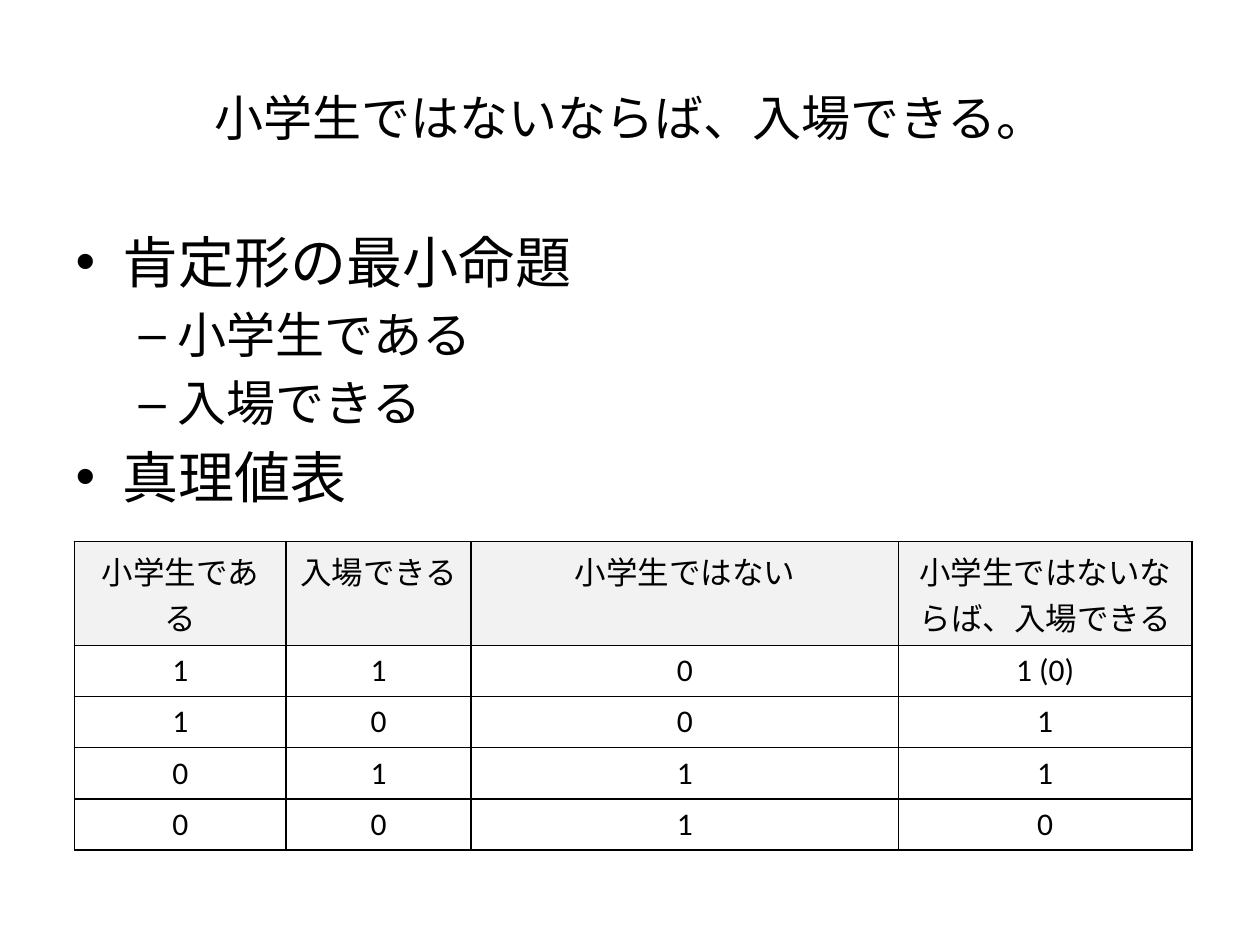
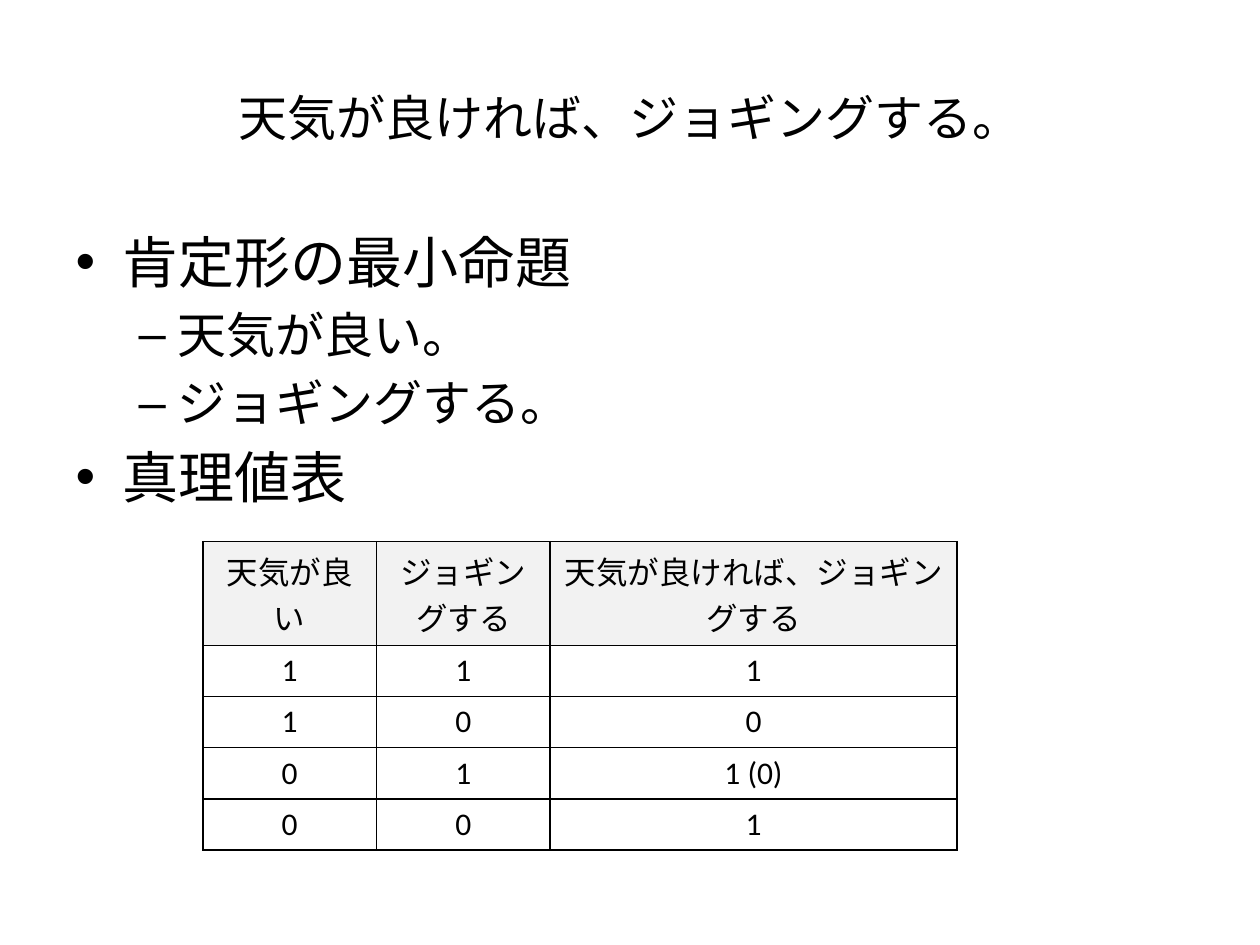
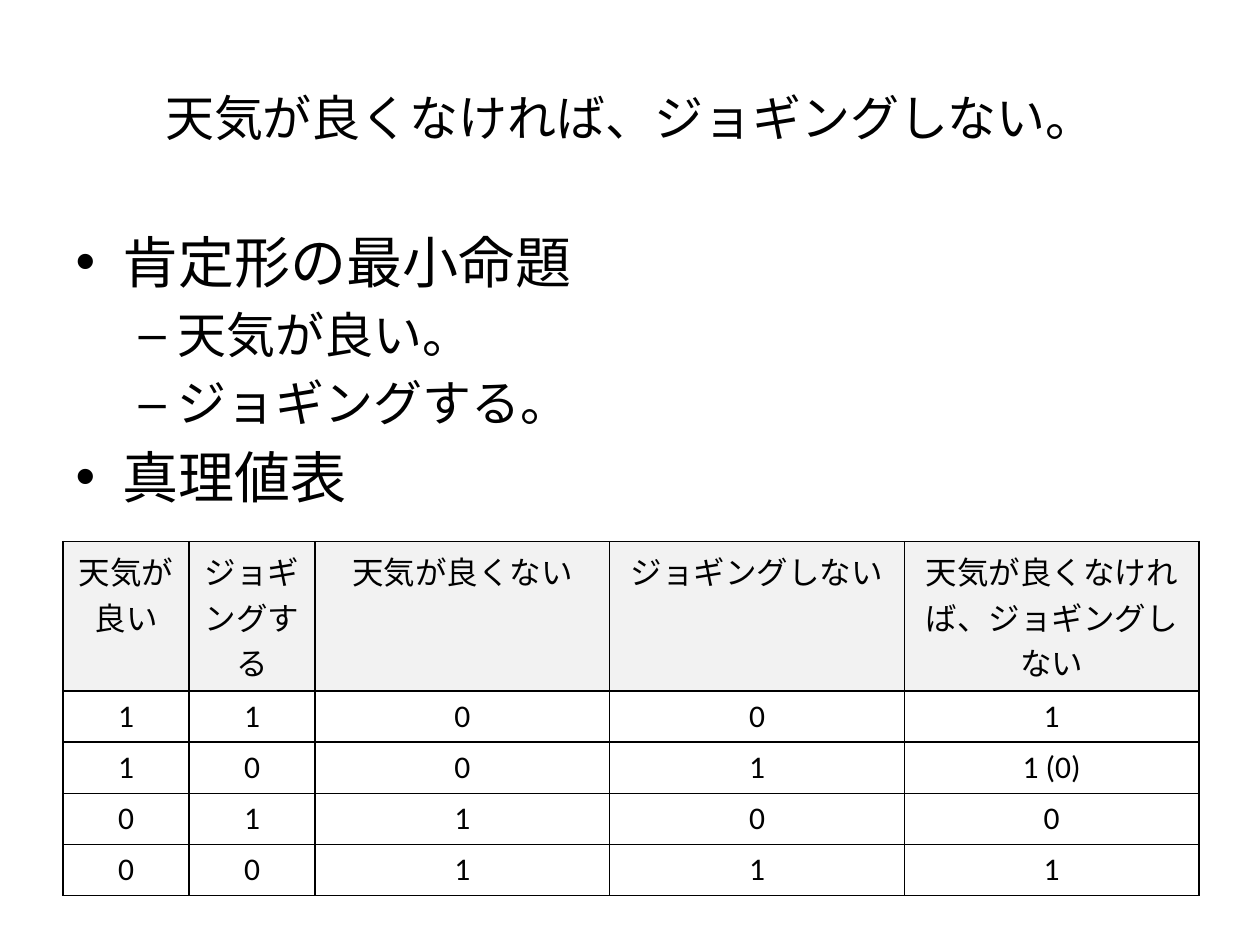
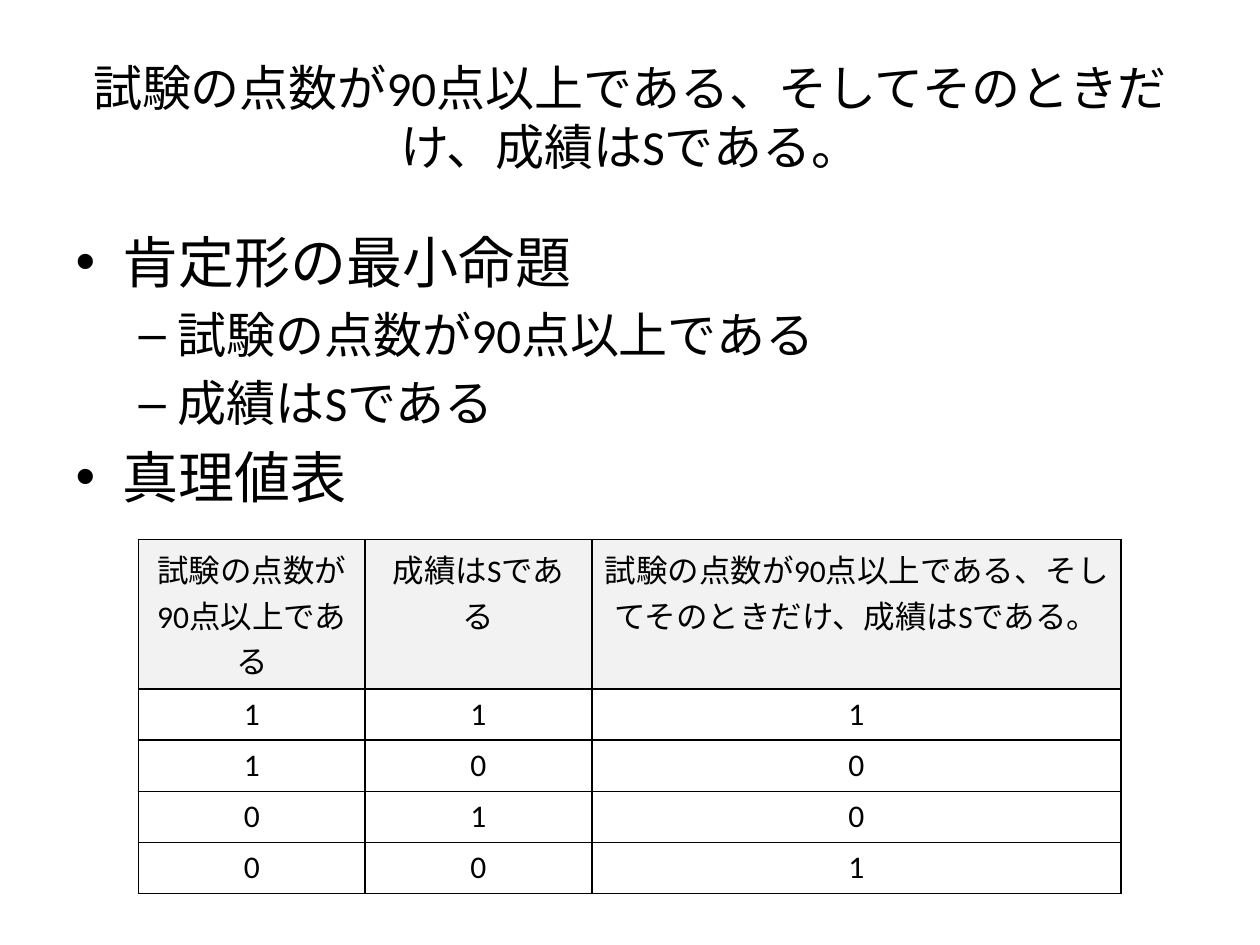
from itertools import product

from lxml.etree import SubElement as Sub
from pptx import Presentation
from pptx.dml.color import RGBColor
from pptx.enum.lang import MSO_LANGUAGE_ID as Lang
from pptx.enum.text import MSO_ANCHOR as Anchor, PP_ALIGN as Align
from pptx.oxml.ns import qn
from pptx.util import Cm, Pt

BLACK = RGBColor(0x00, 0x00, 0x00)
GREY = RGBColor(0xF2, 0xF2, 0xF2)
ROW = Cm(1.03)
EDGE = Pt(1)


class Deck:
    """Holds the shared style and the current slide."""

    base = {"name": "Calibri", "bold": False, "language_id": Lang.JAPANESE}

    def __init__(self):
        self.prs = Presentation()
        self.prs.slide_width, self.prs.slide_height = Cm(25.4), Cm(19.05)
        self.slide = None

    def page(self):
        self.slide = self.prs.slides.add_slide(self.prs.slide_layouts[1])

    def place(self, shape, left, top, width, height):
        box = {"left": left, "top": top, "width": width, "height": height}
        for key, val in box.items():
            setattr(shape, key, Cm(val))

    def label(self, para, text, size):
        run = para.add_run()
        run.text = text
        for key, val in {**self.base, "size": Pt(size)}.items():
            setattr(run.font, key, val)
        run.font.color.rgb = BLACK

    def title(self, text):
        shape = self.slide.shapes.title
        self.place(shape, 1.27, 0.76, 22.86, 3.18)
        frame = shape.text_frame
        frame.vertical_anchor = Anchor.MIDDLE
        frame.paragraphs[0].alignment = Align.CENTER
        self.label(frame.paragraphs[0], text, 28)

    def points(self, items):
        shape = self.slide.placeholders[1]
        self.place(shape, 1.27, 4.45, 22.86, 12.57)
        frame = shape.text_frame
        for i, (level, text) in enumerate(items):
            para = frame.add_paragraph() if i else frame.paragraphs[0]
            para.level = level
            self.label(para, text, 28 if level else 32)

    def border(self, cell):
        props = cell._tc.get_or_add_tcPr()
        for side in ("lnL", "lnR", "lnT", "lnB"):
            line = Sub(props, qn(f"a:{side}"), w=str(EDGE))
            fill = Sub(line, qn("a:solidFill"))
            Sub(fill, qn("a:srgbClr"), val=str(BLACK))

    def table(self, rows, left, top, widths):
        frame = self.slide.shapes.add_table(
            len(rows), len(widths), Cm(left), Cm(top),
            Cm(sum(widths)), ROW * len(rows))
        grid = frame.table
        grid.first_row = grid.horz_banding = False
        for col, width in zip(grid.columns, widths):
            col.width = Cm(width)
        for r, row in enumerate(rows):
            grid.rows[r].height = ROW
            for c, text in enumerate(row):
                cell = grid.cell(r, c)
                self.border(cell)
                if r:
                    cell.fill.background()
                else:
                    cell.fill.solid()
                    cell.fill.fore_color.rgb = GREY
                para = cell.text_frame.paragraphs[0]
                para.alignment = Align.CENTER
                self.label(para, text, 18)


# Each slide: title, two minimal statements, table heads, the value
# columns that follow the two inputs, and the table's place
PAGES = [
    {
        "title": "小学生ではないならば、入場できる。",
        "facts": ["小学生である", "入場できる"],
        "heads": ["小学生である", "入場できる", "小学生ではない",
                  "小学生ではないならば、入場できる"],
        "values": [["0", "0", "1", "1"], ["1 (0)", "1", "1", "0"]],
        "left": 1.5, "top": 10.92, "widths": [4.27, 3.73, 8.61, 5.92],
    },
    {
        "title": "天気が良ければ、ジョギングする。",
        "facts": ["天気が良い。", "ジョギングする。"],
        "heads": ["天気が良い", "ジョギングする",
                  "天気が良ければ、ジョギングする"],
        "values": [["1", "0", "1 (0)", "1"]],
        "left": 4.09, "top": 10.92, "widths": [3.5, 3.5, 8.2],
    },
    {
        "title": "天気が良くなければ、ジョギングしない。",
        "facts": ["天気が良い。", "ジョギングする。"],
        "heads": ["天気が良い", "ジョギングする", "天気が良くない",
                  "ジョギングしない", "天気が良くなければ、ジョギングしない"],
        "values": [["0", "0", "1", "1"], ["0", "1", "0", "1"],
                   ["1", "1 (0)", "0", "1"]],
        "left": 1.27, "top": 10.92, "widths": [2.54] * 2 + [5.94] * 3,
    },
    {
        "title": "試験の点数が90点以上である、そしてそのときだけ、成績はSである。",
        "facts": ["試験の点数が90点以上である", "成績はSである"],
        "heads": ["試験の点数が90点以上である", "成績はSである",
                  "試験の点数が90点以上である、そしてそのときだけ、成績はSである。"],
        "values": [["1", "0", "0", "1"]],
        "left": 2.79, "top": 10.88, "widths": [4.57, 4.57, 10.67],
    },
]


def main():
    deck = Deck()
    for page in PAGES:
        deck.page()
        deck.title(page["title"])
        deck.points([(0, "肯定形の最小命題"),
                     *((1, fact) for fact in page["facts"]),
                     (0, "真理値表")])
        # Every pair of truth values, then the derived columns
        pairs = product("10", repeat=2)
        rows = [[*pair, *rest] for pair, rest in zip(pairs, zip(*page["values"]))]
        deck.table([page["heads"], *rows],
                   page["left"], page["top"], page["widths"])
    deck.prs.save("out.pptx")


if __name__ == "__main__":
    main()
